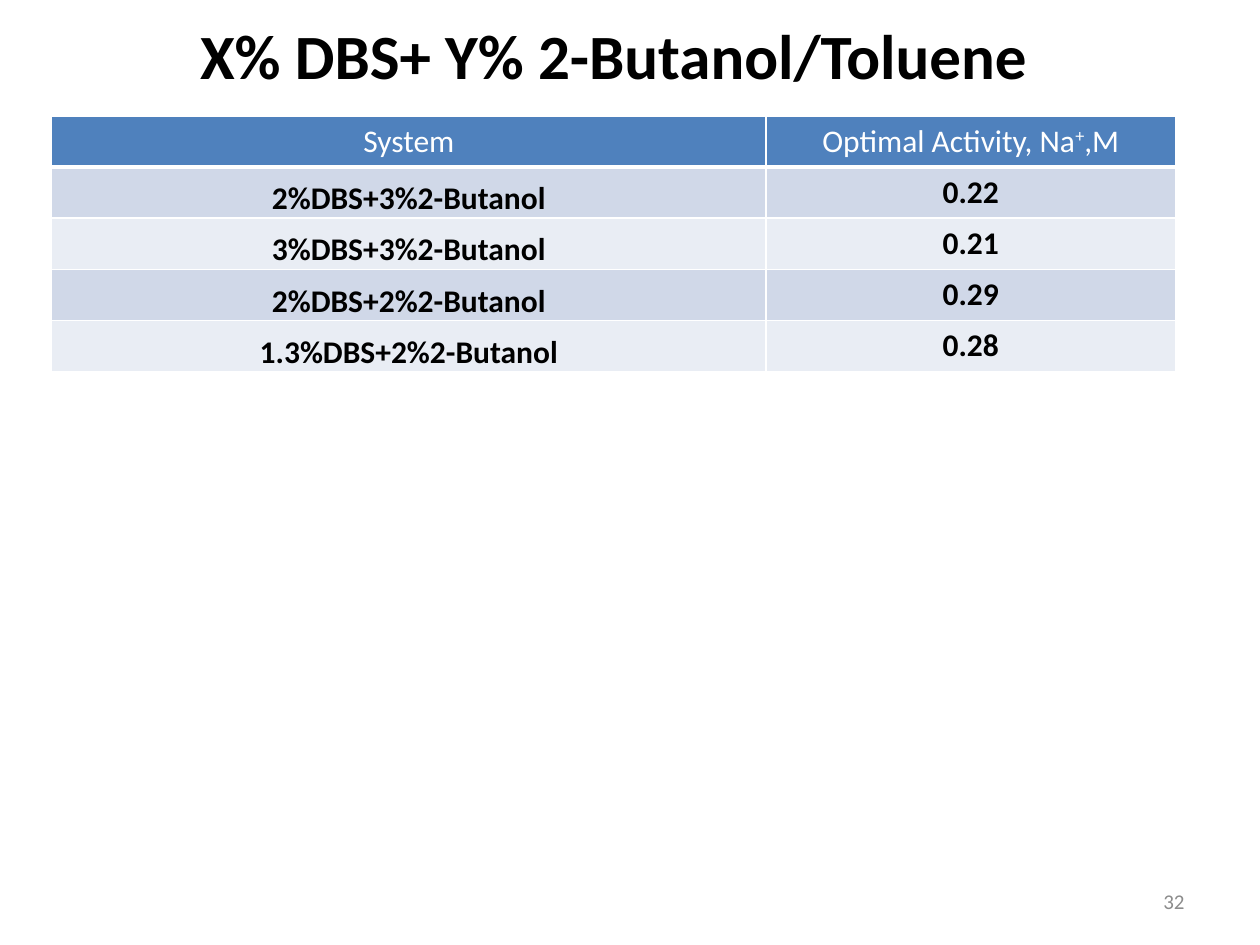
from dataclasses import dataclass

from lxml import etree
from pptx import Presentation
from pptx import util as u
from pptx.dml.color import RGBColor
from pptx.enum import text
from pptx.oxml import ns


@dataclass(frozen=True)
class Theme:
    font: str = "Calibri"
    black: str = "000000"
    white: str = "FFFFFF"
    gray: str = "8C8C8C"
    header: str = "4F81BD"
    bands: tuple = ("D0D8E8", "E9EDF4")
    title_size: int = 36
    table_size: int = 18
    number_size: int = 12


THEME = Theme()
COLUMN_WIDTHS = (5.67, 3.25)
# Each header is a list of (text, is superscript) runs
HEADERS = (
    [("System", False)],
    [("Optimal Activity, Na", False), ("+", True), (",M", False)],
)
ACTIVITIES = (
    ("2%DBS+3%2-Butanol", "0.22"),
    ("3%DBS+3%2-Butanol", "0.21"),
    ("2%DBS+2%2-Butanol", "0.29"),
    ("1.3%DBS+2%2-Butanol", "0.28"),
)


def set_values(target, values):
    for name, value in values.items():
        setattr(target, name, value)


def write_runs(frame, runs, size, color, bold=False, align=text.PP_ALIGN.CENTER):
    paragraph = frame.paragraphs[0]
    paragraph.alignment = align
    for words, superscript in runs:
        run = paragraph.add_run()
        run.text = words
        set_values(run.font, {"name": THEME.font, "size": u.Pt(size), "bold": bold})
        run.font.color.rgb = RGBColor.from_string(color)
        if superscript:
            run._r.get_or_add_rPr().set("baseline", "30000")


def set_borders(cell, bottom_width):
    properties = cell._tc.get_or_add_tcPr()
    widths = {"lnL": 1, "lnR": 1, "lnT": 1, "lnB": bottom_width}
    for side, width in widths.items():
        line = etree.SubElement(properties, ns.qn(f"a:{side}"), w=str(u.Pt(width)))
        fill = etree.SubElement(line, ns.qn("a:solidFill"))
        etree.SubElement(fill, ns.qn("a:srgbClr"), val=THEME.white)


def place(shape, box):
    names = ("left", "top", "width", "height")
    set_values(shape, dict(zip(names, map(u.Inches, box))))


def add_title(slide, box):
    title = slide.shapes.title
    place(title, box)
    set_values(title.text_frame, {
        "word_wrap": True,
        "auto_size": text.MSO_AUTO_SIZE.NONE,
        "vertical_anchor": text.MSO_ANCHOR.TOP,
    })
    write_runs(title.text_frame, [("X% DBS+ Y% 2-Butanol/Toluene", False)],
               THEME.title_size, THEME.black, bold=True)


def fill_cell(cell, runs, fill, color, bold, bottom_width):
    set_borders(cell, bottom_width)
    cell.fill.solid()
    cell.fill.fore_color.rgb = RGBColor.from_string(fill)
    write_runs(cell.text_frame, runs, THEME.table_size, color, bold)


def add_activity_table(slide, box):
    table = slide.shapes.add_table(
        len(ACTIVITIES) + 1, len(COLUMN_WIDTHS), *map(u.Inches, box)).table
    for column, width in zip(table.columns, COLUMN_WIDTHS):
        column.width = u.Inches(width)

    # Header row
    for index, runs in enumerate(HEADERS):
        fill_cell(table.cell(0, index), runs, THEME.header, THEME.white, False, 3)

    # Banded rows, with the system names resting on the bottom edge
    system_format = {
        "vertical_anchor": text.MSO_ANCHOR.BOTTOM,
        "margin_left": u.Inches(0.01),
        "margin_top": u.Inches(0.01),
        "margin_right": u.Inches(0.01),
        "margin_bottom": 0,
    }
    for row, values in enumerate(ACTIVITIES, start=1):
        band = THEME.bands[(row - 1) % 2]
        for index, value in enumerate(values):
            fill_cell(table.cell(row, index), [(value, False)], band,
                      THEME.black, True, 1)
        set_values(table.cell(row, 0), system_format)


def add_page_number(slide, box):
    frame = slide.shapes.add_textbox(*map(u.Inches, box)).text_frame
    set_values(frame, {"word_wrap": True, "vertical_anchor": text.MSO_ANCHOR.MIDDLE})
    write_runs(frame, [("32", False)], THEME.number_size, THEME.gray,
               align=text.PP_ALIGN.RIGHT)


def main():
    presentation = Presentation()
    set_values(presentation, {
        "slide_width": u.Inches(10), "slide_height": u.Inches(7.5)})
    title_only = presentation.slide_layouts.get_by_name("Title Only")
    slide = presentation.slides.add_slide(title_only)
    add_title(slide, (0.15, 0.08, 9.44, 1.17))
    add_activity_table(slide, (0.41, 0.92, sum(COLUMN_WIDTHS), 2.03))
    add_page_number(slide, (7.17, 6.95, 2.33, 0.4))
    presentation.save("out.pptx")


if __name__ == "__main__":
    main()
